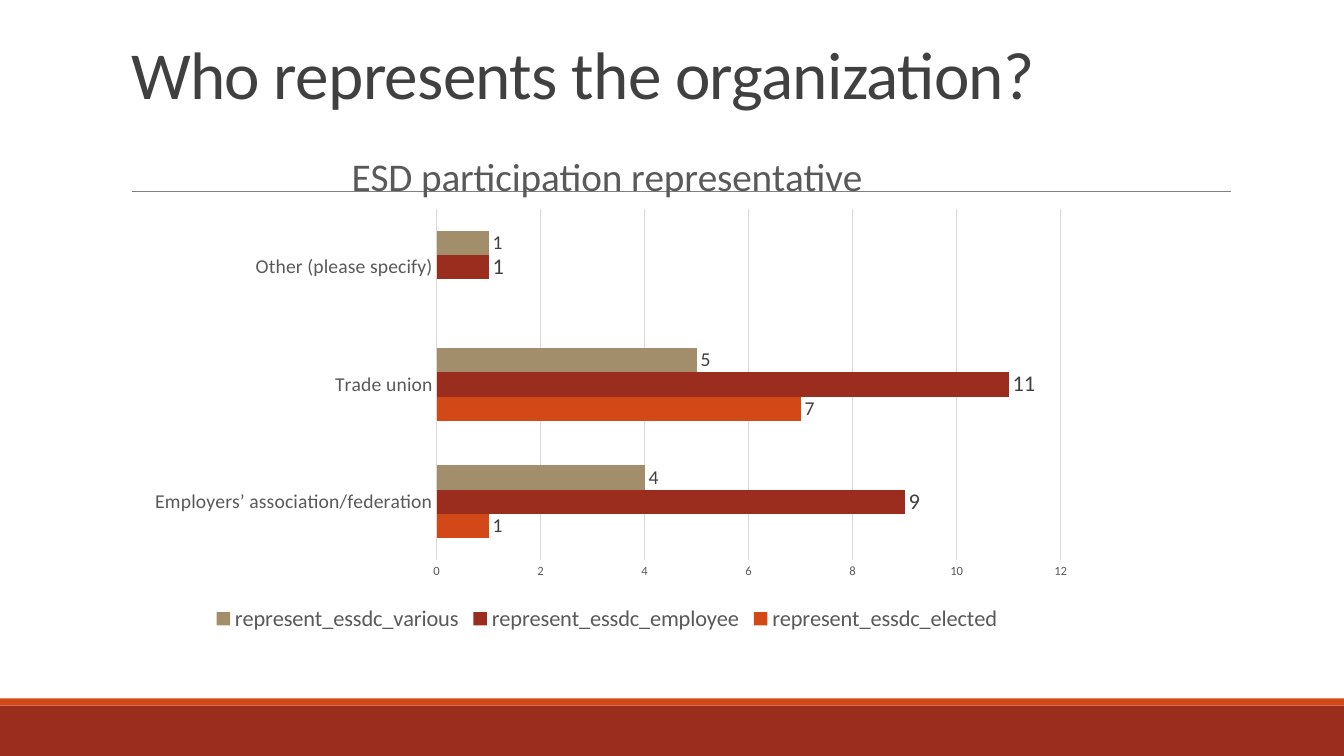
from dataclasses import dataclass
from typing import Any, Optional

from lxml import etree
from pptx import Presentation
from pptx import util as u
from pptx.chart.data import CategoryChartData
from pptx.dml.color import RGBColor
from pptx.enum import chart as ch
from pptx.enum import shapes, text
from pptx.oxml import ns

RUST = RGBColor(0x9B, 0x2D, 0x1F)
ORANGE = RGBColor(0xD3, 0x48, 0x17)
TAN = RGBColor(0xA2, 0x8E, 0x6A)
DARK = RGBColor(0x40, 0x40, 0x40)
MEDIUM = RGBColor(0x59, 0x59, 0x59)
RULE_GRAY = RGBColor(0x80, 0x80, 0x80)
GRID_GRAY = RGBColor(0xD9, 0xD9, 0xD9)
FONT = "Calibri"
WIDTH, HEIGHT = 33.87, 19.05


@dataclass(frozen=True)
class Band:
    top: float
    height: float
    color: RGBColor


@dataclass(frozen=True)
class Role:
    name: str
    counts: tuple[Optional[int], ...]
    color: RGBColor
    label_size: int


BANDS = (Band(17.78, 1.27, RUST), Band(17.6, 0.18, ORANGE))
ORGANIZATIONS = (
    "Employers’ association/federation",
    "Trade union",
    "Other (please specify)",
)
ROLES = (
    Role("represent_essdc_elected", (1, 7, None), ORANGE, 14),
    Role("represent_essdc_employee", (9, 11, 1), RUST, 16),
    Role("represent_essdc_various", (4, 5, 1), TAN, 14),
)
PLOT_AREA = {
    "layoutTarget": "inner",
    "xMode": "edge",
    "yMode": "edge",
    "x": "0.32",
    "y": "0.16",
    "w": "0.66",
    "h": "0.69",
}


def apply(target: Any, values: dict[str, Any]) -> None:
    for attribute, value in values.items():
        setattr(target, attribute, value)


def set_font(font: Any, size: float, color: RGBColor) -> None:
    apply(font, {"name": FONT, "size": u.Pt(size), "bold": False})
    font.color.rgb = color


def set_line(line: Any, color: RGBColor, width: float) -> None:
    line.color.rgb = color
    line.width = u.Pt(width)


def draw_band(slide: Any, band: Band) -> None:
    strip = slide.shapes.add_shape(
        shapes.MSO_SHAPE.RECTANGLE,
        u.Cm(0), u.Cm(band.top), u.Cm(WIDTH), u.Cm(band.height),
    )
    strip.shadow.inherit = False
    strip.fill.solid()
    strip.fill.fore_color.rgb = band.color
    strip.line.fill.background()


def draw_rule(slide: Any) -> None:
    rule = slide.shapes.add_connector(
        shapes.MSO_CONNECTOR.STRAIGHT,
        u.Cm(3.33), u.Cm(4.83), u.Cm(31.01), u.Cm(4.83),
    )
    set_line(rule.line, RULE_GRAY, 0.5)
    etree.SubElement(rule._element.spPr, ns.qn("a:effectLst"))


def write_title(slide: Any) -> None:
    heading = slide.shapes.title
    apply(heading, {
        "left": u.Cm(3.05), "top": u.Cm(0.91),
        "width": u.Cm(27.94), "height": u.Cm(2.08),
    })
    frame = heading.text_frame
    apply(frame, {
        "word_wrap": True,
        "auto_size": text.MSO_AUTO_SIZE.NONE,
        "vertical_anchor": text.MSO_ANCHOR.BOTTOM,
    })
    question = frame.paragraphs[0]
    apply(question, {"alignment": text.PP_ALIGN.LEFT, "line_spacing": 0.85})
    words = question.add_run()
    words.text = "Who represents the organization?"
    set_font(words.font, 48, DARK)
    words._r.get_or_add_rPr().set("spc", "-50")


def place_plot(chart: Any) -> None:
    plot_area = chart._chartSpace.chart.plotArea
    for previous in plot_area.findall(ns.qn("c:layout")):
        plot_area.remove(previous)
    layout = etree.Element(ns.qn("c:layout"))
    manual = etree.SubElement(layout, ns.qn("c:manualLayout"))
    for tag, value in PLOT_AREA.items():
        etree.SubElement(manual, ns.qn(f"c:{tag}")).set("val", value)
    plot_area.insert(0, layout)


def format_axes(chart: Any) -> None:
    organizations, counts = chart.category_axis, chart.value_axis
    for axis, size in ((organizations, 14), (counts, 9)):
        apply(axis, {
            "major_tick_mark": ch.XL_TICK_MARK.NONE,
            "minor_tick_mark": ch.XL_TICK_MARK.NONE,
        })
        set_font(axis.tick_labels.font, size, MEDIUM)
    organizations.has_major_gridlines = False
    set_line(organizations.format.line, GRID_GRAY, 0.75)
    apply(counts, {
        "minimum_scale": 0, "maximum_scale": 12, "major_unit": 2,
        "has_major_gridlines": True,
    })
    set_line(counts.major_gridlines.format.line, GRID_GRAY, 0.75)
    counts.format.line.fill.background()


def format_role(bars: Any, role: Role) -> None:
    bars.format.fill.solid()
    bars.format.fill.fore_color.rgb = role.color
    bars.invert_if_negative = False
    apply(bars.data_labels, {
        "show_value": True,
        "position": ch.XL_LABEL_POSITION.OUTSIDE_END,
    })
    set_font(bars.data_labels.font, role.label_size, DARK)


def draw_chart(slide: Any) -> None:
    participation = CategoryChartData(number_format="General")
    participation.categories = ORGANIZATIONS
    for role in ROLES:
        participation.add_series(role.name, role.counts)
    chart = slide.shapes.add_chart(
        ch.XL_CHART_TYPE.BAR_CLUSTERED,
        u.Cm(3.38), u.Cm(3.2), u.Cm(23.83), u.Cm(12.85), participation,
    ).chart
    set_font(chart.font, 10, MEDIUM)
    apply(chart, {"has_title": True, "has_legend": True})
    caption = chart.chart_title.text_frame.paragraphs[0].add_run()
    caption.text = "ESD participation representative"
    set_font(caption.font, 28, MEDIUM)
    chart.chart_title.include_in_layout = False
    apply(chart.legend, {
        "position": ch.XL_LEGEND_POSITION.BOTTOM,
        "include_in_layout": False,
    })
    set_font(chart.legend.font, 16, MEDIUM)
    apply(chart.plots[0], {
        "gap_width": 182, "overlap": 0, "vary_by_categories": False,
    })
    for bars, role in zip(chart.plots[0].series, ROLES):
        format_role(bars, role)
    format_axes(chart)
    place_plot(chart)


def main() -> None:
    deck = Presentation()
    apply(deck, {"slide_width": u.Cm(WIDTH), "slide_height": u.Cm(HEIGHT)})
    slide = deck.slides.add_slide(deck.slide_layouts[5])
    for band in BANDS:
        draw_band(slide, band)
    draw_rule(slide)
    write_title(slide)
    draw_chart(slide)
    deck.save("out.pptx")


if __name__ == "__main__":
    main()
